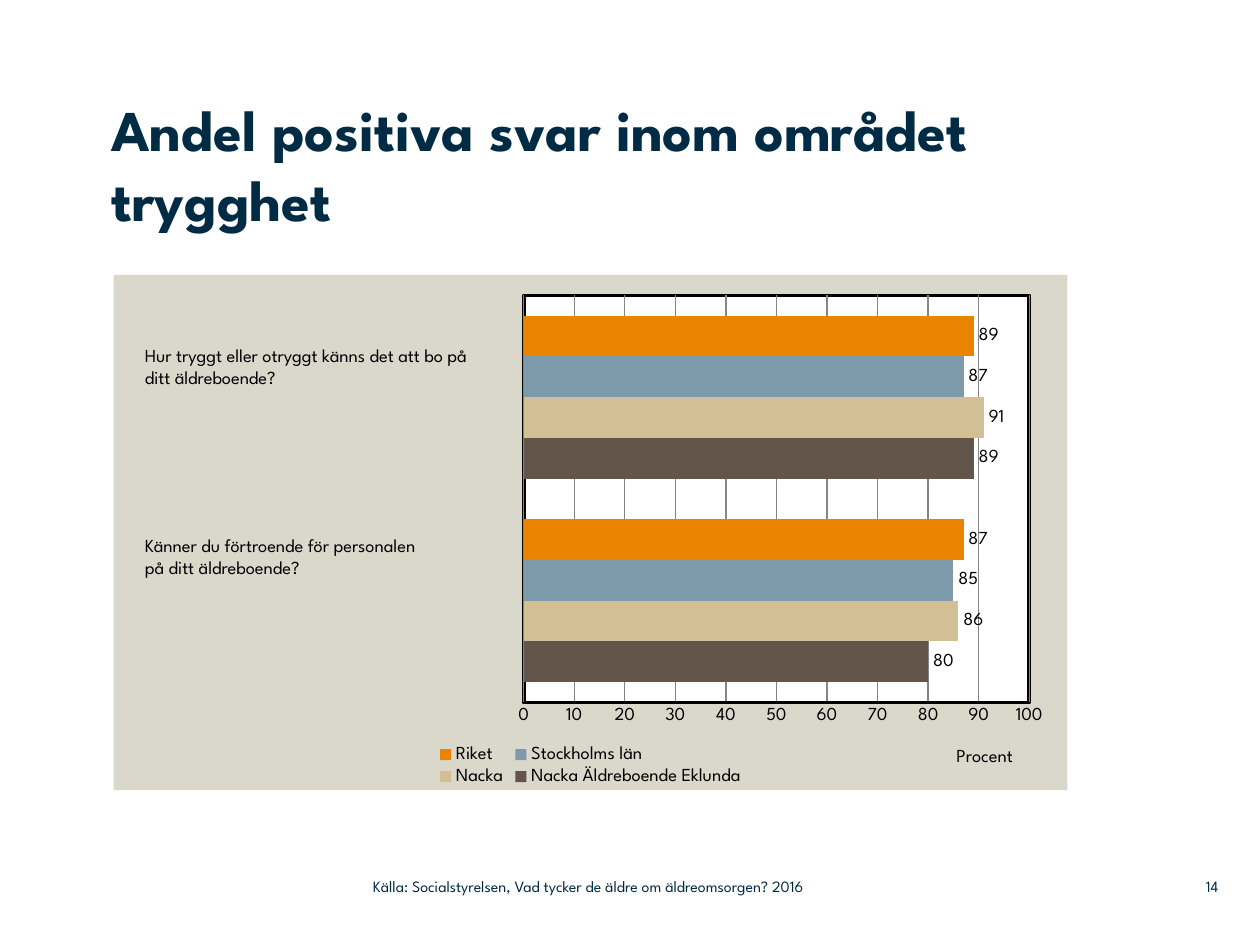
from lxml import etree
from pptx import Presentation
from pptx.chart.data import CategoryChartData
from pptx.dml.color import RGBColor
from pptx.enum.chart import XL_CHART_TYPE, XL_LABEL_POSITION, XL_LEGEND_POSITION, XL_TICK_MARK
from pptx.enum.text import MSO_ANCHOR, MSO_AUTO_SIZE, PP_ALIGN
from pptx.oxml import parse_xml
from pptx.oxml.ns import nsdecls, qn
from pptx.util import Cm, Pt

BAR = XL_CHART_TYPE.BAR_CLUSTERED
OUTSIDE = XL_LABEL_POSITION.OUTSIDE_END
BOTTOM = XL_LEGEND_POSITION.BOTTOM
NO_TICK = XL_TICK_MARK.NONE
TOP, MIDDLE = MSO_ANCHOR.TOP, MSO_ANCHOR.MIDDLE
LEFT, RIGHT = PP_ALIGN.LEFT, PP_ALIGN.RIGHT
NO_FIT = MSO_AUTO_SIZE.NONE

FONT = "League Spartan"
NAVY, BLACK = "002B45", "000000"
SERIES = [
    ("Nacka Äldreboende Eklunda", (80, 89), "635549"),
    ("Nacka", (86, 91), "D3BF96"),
    ("Stockholms län", (85, 87), "7D9AAA"),
    ("Riket", (87, 89), "E98300"),
]


def rgb(value):
    return RGBColor.from_string(value)


def set_font(font, size, color, bold=False):
    font.name, font.size, font.bold = FONT, Pt(size), bold
    font.color.rgb = rgb(color)


def add_text(slide, box, lines, size, color, align=LEFT, anchor=TOP, inset=None):
    """Add a text box with one paragraph for each line; box is in cm."""
    tf = slide.shapes.add_textbox(*map(Cm, box)).text_frame
    tf.word_wrap = True
    tf.vertical_anchor = anchor
    if inset is not None:
        tf.margin_left = tf.margin_top = tf.margin_right = tf.margin_bottom = Cm(inset)
    tf.text = "\n".join(lines)
    for p in tf.paragraphs:
        p.alignment = align
        set_font(p.font, size, color)


def add_title(slide, box, text):
    sp = slide.shapes.title
    sp.left, sp.top, sp.width, sp.height = map(Cm, box)
    tf = sp.text_frame
    tf.margin_left = tf.margin_top = tf.margin_right = tf.margin_bottom = 0
    tf.vertical_anchor, tf.auto_size = TOP, NO_FIT
    tf.text = text
    tf.paragraphs[0].alignment = LEFT
    set_font(tf.paragraphs[0].font, 33, NAVY, bold=True)


def fill_xml(fill, line=None):
    outline = f'<a:solidFill><a:srgbClr val="{line}"/></a:solidFill>' if line else "<a:noFill/>"
    return parse_xml(
        f'<c:spPr {nsdecls("c", "a")}><a:solidFill><a:srgbClr val="{fill}"/></a:solidFill>'
        f'<a:ln w="{Pt(2)}">{outline}</a:ln></c:spPr>')


def set_layout(parent, index, target=None, **place):
    """Give a chart part a manual layout in fractions of the chart."""
    for old in parent.findall(qn("c:layout")):
        parent.remove(old)
    layout = etree.Element(qn("c:layout"))
    manual = etree.SubElement(layout, qn("c:manualLayout"))
    values = {"layoutTarget": target} if target else {}
    values.update(xMode="edge", yMode="edge", **place)
    for name, value in values.items():
        etree.SubElement(manual, qn(f"c:{name}")).set("val", str(value))
    parent.insert(index, layout)


def style_value_axis(axis):
    axis.minimum_scale, axis.maximum_scale, axis.major_unit = 0, 100, 10
    axis.major_tick_mark = axis.minor_tick_mark = NO_TICK
    axis.format.line.color.rgb = rgb(BLACK)
    axis.format.line.width = Pt(2)
    axis.has_major_gridlines = True
    grid = axis.major_gridlines.format.line
    grid.color.rgb, grid.width = rgb("868686"), Pt(0.75)
    set_font(axis.tick_labels.font, 10.5, BLACK)
    tf = axis.axis_title.text_frame
    tf.text = "Procent"
    set_font(tf.paragraphs[0].font, 10.5, BLACK)
    set_layout(axis.axis_title._element, 1, x=0.88, y=0.91)


def add_survey_chart(slide, box):
    data = CategoryChartData()
    data.categories = ["1", "2"]
    for name, values, _ in SERIES:
        data.add_series(name, values)
    chart = slide.shapes.add_chart(BAR, *map(Cm, box), data).chart
    set_font(chart.font, 10.5, BLACK)
    chart.has_title = False
    chart.has_legend = True
    chart.legend.position = BOTTOM
    chart.legend.include_in_layout = False
    set_font(chart.legend.font, 10.5, BLACK)
    chart.category_axis.visible = False
    style_value_axis(chart.value_axis)

    plot = chart.plots[0]
    plot.gap_width, plot.overlap = 100, 0
    plot.vary_by_categories = False
    for series, (_, _, color) in zip(plot.series, SERIES):
        series.format.fill.solid()
        series.format.fill.fore_color.rgb = rgb(color)
        labels = series.data_labels
        labels.show_value, labels.position = True, OUTSIDE
        set_font(labels.font, 10.5, BLACK)

    root = chart._chartSpace
    area = root.find(qn("c:chart")).find(qn("c:plotArea"))
    set_layout(area, 0, "inner", x=0.43, y=0.04, w=0.53, h=0.79)
    area.append(fill_xml("FFFFFF", BLACK))
    root.find(qn("c:chart")).addnext(fill_xml("DAD7CB"))


def add_survey(slide, box):
    """Place the chart and the questions beside its bar groups."""
    left, top, _, _ = box
    add_survey_chart(slide, box)
    questions = [
        (1.27, ["Hur tryggt eller otryggt känns det att bo på ditt äldreboende?"]),
        (5.1, ["Känner du förtroende för personalen", "på ditt äldreboende?"]),
    ]
    for dy, lines in questions:
        add_text(slide, (left + 0.38, top + dy, 7.46, 1.14), lines, 10.5, BLACK)


def add_footer(slide, box):
    left, top, width, height = box
    source = "Källa: Socialstyrelsen, Vad tycker de äldre om äldreomsorgen? 2016"
    add_text(slide, (left, top, 11.25, height), [source], 9, NAVY, LEFT, MIDDLE, 0)
    add_text(slide, (left + width - 1.2, top, 1.2, height), ["14"], 9, NAVY, RIGHT, MIDDLE, 0)


def main():
    prs = Presentation()
    prs.slide_width, prs.slide_height = Cm(25.4), Cm(19.05)
    slide = prs.slides.add_slide(prs.slide_layouts[5])
    add_title(slide, (2.24, 1.9, 19.3, 3.6), "Andel positiva svar inom området trygghet")
    add_survey(slide, (2.29, 5.54, 19.23, 10.39))
    add_footer(slide, (7.52, 17.5, 17.04, 0.74))
    prs.save("out.pptx")


if __name__ == "__main__":
    main()
